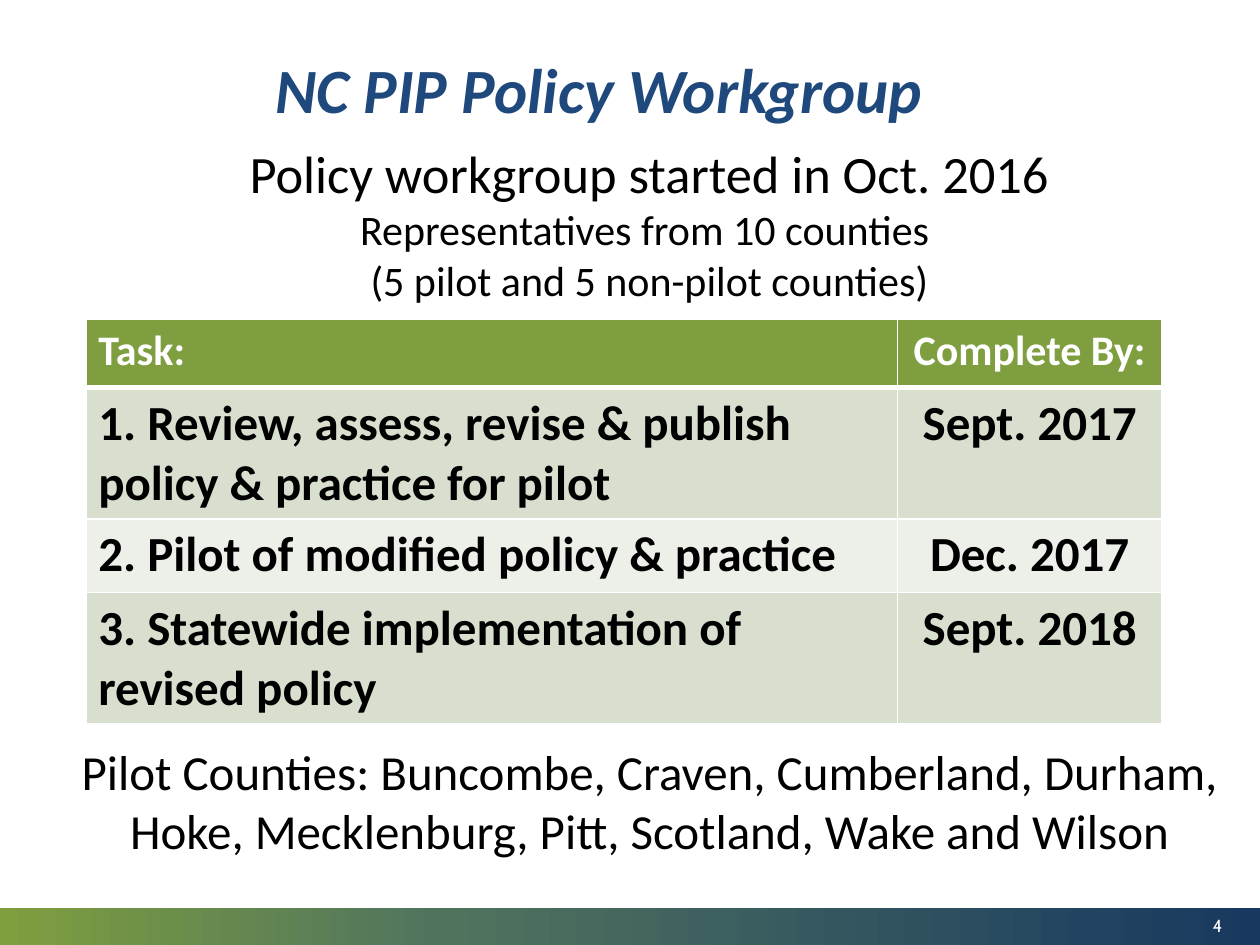
from copy import deepcopy

from lxml import etree
from pptx import Presentation
from pptx import util as u
from pptx.dml.color import RGBColor
from pptx.enum import shapes, text
from pptx.oxml import ns

COLORS = {
    "green": "7F9E3F", "teal": "4F745E", "navy": "183860", "title": "1F497D",
    "band_dark": "D8DFCF", "band_light": "ECF0E8", "black": "000000", "white": "FFFFFF",
}
LEFT, CENTER, RIGHT = text.PP_ALIGN.LEFT, text.PP_ALIGN.CENTER, text.PP_ALIGN.RIGHT


def write(paragraph, words, size, color="black", font="Calibri", align=CENTER,
          bold=False, italic=False):
    paragraph.alignment = align
    run = paragraph.add_run()
    run.text = words
    run.font.name = font
    run.font.size = u.Pt(size)
    run.font.bold = bold
    run.font.italic = italic
    run.font.color.rgb = RGBColor.from_string(COLORS[color])


def add_text_frame(left, top, width, height, anchor=text.MSO_ANCHOR.TOP):
    box = slide.shapes.add_textbox(u.Pt(left), u.Pt(top), u.Pt(width), u.Pt(height))
    box.text_frame.word_wrap = True
    box.text_frame.vertical_anchor = anchor
    return box.text_frame


presentation = Presentation()
presentation.slide_width, presentation.slide_height = u.Pt(720), u.Pt(540)
slide = presentation.slides.add_slide(presentation.slide_layouts[6])

# Footer band with a three-stop gradient
band = slide.shapes.add_shape(shapes.MSO_SHAPE.RECTANGLE,
                              u.Pt(0), u.Pt(519), u.Pt(720), u.Pt(21))
band.shadow.inherit = False
band.line.fill.background()
band.fill.gradient()
band.fill.gradient_angle = 0
first_stop = next(band._element.iter(ns.qn("a:gs")))
first_stop.addnext(deepcopy(first_stop))
stops = [(0, "green"), (0.35, "teal"), (1, "navy")]
for stop, (position, color) in zip(band.fill.gradient_stops, stops):
    stop.position = position
    stop.color.rgb = RGBColor.from_string(COLORS[color])

# Page number
frame = add_text_frame(543.6, 523.5, 162, 11, text.MSO_ANCHOR.MIDDLE)
frame.margin_top = frame.margin_bottom = 0
write(frame.paragraphs[0], "4", 10, "white", "Cabin", RIGHT)

# Title
frame = add_text_frame(36.7, 7.2, 619.2, 69, text.MSO_ANCHOR.BOTTOM)
frame.paragraphs[0].line_spacing = 0.9
write(frame.paragraphs[0], "NC PIP Policy Workgroup ", 36, "title", bold=True, italic=True)

# Introduction
frame = add_text_frame(36.7, 77, 668.9, 100)
write(frame.paragraphs[0], "Policy workgroup started in Oct. 2016", 30)
for line in ("Representatives from 10 counties ", "(5 pilot and 5 non-pilot counties)"):
    write(frame.add_paragraph(), line, 24)

# Task table
rows = [
    ("Task:", "Complete By:"),
    ("1. Review, assess, revise & publish policy & practice for pilot", "Sept. 2017"),
    ("2. Pilot of modified policy & practice", "Dec. 2017"),
    ("3. Statewide implementation of revised policy", "Sept. 2018"),
]
table = slide.shapes.add_table(4, 2, u.Pt(49), u.Pt(182.5), u.Pt(615), u.Pt(231)).table
for column, width in zip(table.columns, (463.8, 151.2)):
    column.width = u.Pt(width)
for row, height in zip(table.rows, (39, 75, 42, 75)):
    row.height = u.Pt(height)

for row_index, row in enumerate(rows):
    header = row_index == 0
    fill = "green" if header else "band_dark" if row_index % 2 else "band_light"
    for column_index, words in enumerate(row):
        cell = table.cell(row_index, column_index)
        cell.fill.solid()
        cell.fill.fore_color.rgb = RGBColor.from_string(COLORS[fill])
        write(cell.text_frame.paragraphs[0], words, 24 if header else 28,
              "white" if header else "black", align=CENTER if column_index else LEFT, bold=True)
        # White borders, thicker beneath the header
        properties = cell._tc.get_or_add_tcPr()
        for order, side in enumerate(("lnL", "lnR", "lnT", "lnB")):
            thick = (row_index, side) in ((0, "lnB"), (1, "lnT"))
            border = etree.Element(ns.qn("a:" + side), w=str(u.Pt(3 if thick else 1)))
            solid = etree.SubElement(border, ns.qn("a:solidFill"))
            etree.SubElement(solid, ns.qn("a:srgbClr"), val=COLORS["white"])
            properties.insert(order, border)

# Pilot counties
frame = add_text_frame(36.7, 420, 668.9, 76)
write(frame.paragraphs[0], "Pilot Counties: Buncombe, Craven, Cumberland, Durham, Hoke, "
      "Mecklenburg, Pitt, Scotland, Wake and Wilson", 28)

presentation.save("out.pptx")
